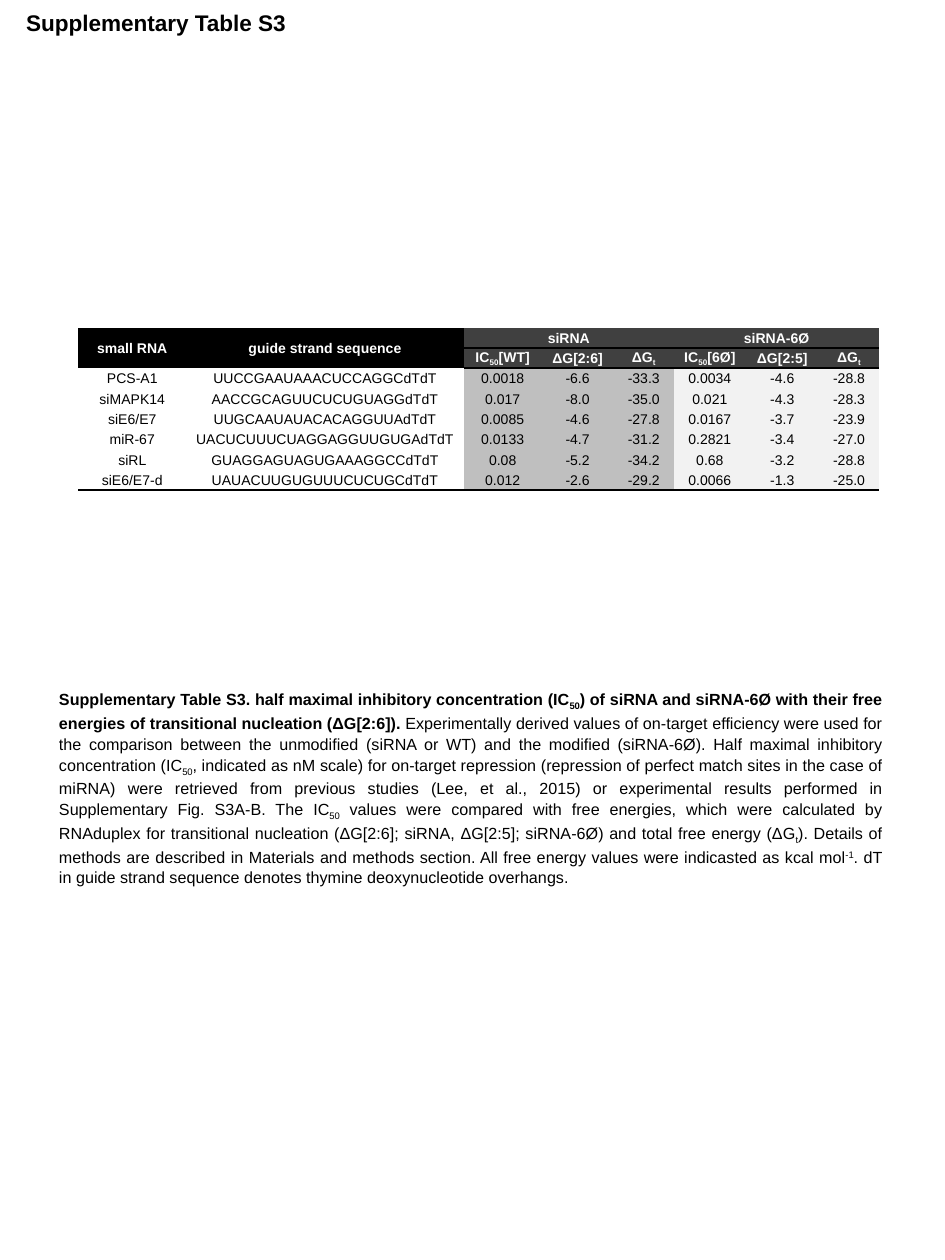
from lxml.etree import SubElement
from pptx import Presentation
from pptx.dml.color import RGBColor
from pptx.enum.text import MSO_ANCHOR, PP_ALIGN
from pptx.oxml.ns import qn
from pptx.util import Inches, Pt

NO_STYLE_NO_GRID = "{2D5ABB26-0587-4C30-8999-92F81FD0307C}"
SUBSCRIPT, SUPERSCRIPT = -25000, 30000


def add_span(para, text, size, bold=False, color="000000", baseline=0):
    span = para.add_run()
    span.text = text
    span.font.name = "Arial"
    span.font.size = Pt(size)
    span.font.bold = bold
    span.font.color.rgb = RGBColor.from_string(color)
    if baseline:
        span.font._element.set("baseline", str(baseline))


def add_border(cell, side):
    """Draw a black 1 pt line on one side: lnT or lnB."""
    line = SubElement(cell._tc.get_or_add_tcPr(), qn(f"a:{side}"), w=str(Pt(1)))
    fill = SubElement(line, qn("a:solidFill"))
    SubElement(fill, qn("a:srgbClr"), val="000000")


deck = Presentation()
deck.slide_width, deck.slide_height = Inches(7.5), Inches(10)
page = deck.slides.add_slide(deck.slide_layouts[6])

# Table: "|" switches subscript on and off
rows = [
    ["small RNA", "guide strand sequence", "siRNA", "", "", "siRNA-6Ø", "", ""],
    ["", "", "IC|50|[WT]", "ΔG[2:6]", "ΔG|t", "IC|50|[6Ø]", "ΔG[2:5]", "ΔG|t"],
    ["PCS-A1", "UUCCGAAUAAACUCCAGGCdTdT", "0.0018", "-6.6", "-33.3", "0.0034", "-4.6", "-28.8"],
    ["siMAPK14", "AACCGCAGUUCUCUGUAGGdTdT", "0.017", "-8.0", "-35.0", "0.021", "-4.3", "-28.3"],
    ["siE6/E7", "UUGCAAUAUACACAGGUUAdTdT", "0.0085", "-4.6", "-27.8", "0.0167", "-3.7", "-23.9"],
    ["miR-67", "UACUCUUUCUAGGAGGUUGUGAdTdT", "0.0133", "-4.7", "-31.2", "0.2821", "-3.4", "-27.0"],
    ["siRL", "GUAGGAGUAGUGAAAGGCCdTdT", "0.08", "-5.2", "-34.2", "0.68", "-3.2", "-28.8"],
    ["siE6/E7-d", "UAUACUUGUGUUUCUCUGCdTdT", "0.012", "-2.6", "-29.2", "0.0066", "-1.3", "-25.0"],
]
widths = [0.86, 2.2, 0.62, 0.57, 0.48, 0.57, 0.58, 0.48]
header_fills = ["000000"] * 2 + ["404040"] * 6
body_fills = [None] * 2 + ["BFBFBF"] * 3 + ["F2F2F2"] * 3

frame = page.shapes.add_table(len(rows), len(widths), Inches(0.62), Inches(2.6),
                              Inches(sum(widths)), Inches(1.29))
table = frame.table
table.first_row = table.horz_banding = False
table._tbl.tblPr.find(qn("a:tableStyleId")).text = NO_STYLE_NO_GRID
for column, width in zip(table.columns, widths):
    column.width = Inches(width)
for row in table.rows:
    row.height = Inches(1.29 / len(rows))

for row_index, values in enumerate(rows):
    is_header = row_index < 2
    fills = header_fills if is_header else body_fills
    for column_index, value in enumerate(values):
        cell = table.cell(row_index, column_index)
        cell.margin_left = cell.margin_top = cell.margin_right = Inches(0.01)
        cell.margin_bottom = 0
        cell.vertical_anchor = MSO_ANCHOR.MIDDLE
        para = cell.text_frame.paragraphs[0]
        para.alignment = PP_ALIGN.CENTER
        para.font.size = Pt(8)
        for part_index, part in enumerate(value.split("|") if value else []):
            add_span(para, part, 8, bold=is_header,
                     color="FFFFFF" if is_header else "000000",
                     baseline=SUBSCRIPT if part_index % 2 else 0)
        # Borders come before the fill in the cell properties
        if row_index == 1 and column_index >= 2:
            add_border(cell, "lnT")
        if row_index in (1, 7) or (row_index == 0 and column_index >= 2):
            add_border(cell, "lnB")
        if fills[column_index]:
            cell.fill.solid()
            cell.fill.fore_color.rgb = RGBColor.from_string(fills[column_index])

for column_index in (0, 1):
    table.cell(0, column_index).merge(table.cell(1, column_index))
for column_index in (2, 5):
    table.cell(0, column_index).merge(table.cell(0, column_index + 2))

# Caption
caption = page.shapes.add_textbox(Inches(0.37), Inches(5.41), Inches(6.73), Inches(2.79))
caption.text_frame.word_wrap = True
para = caption.text_frame.paragraphs[0]
para.alignment = PP_ALIGN.JUSTIFY
para.line_spacing = 1.08
caption_parts = [
    ("Supplementary Table S3. half maximal inhibitory concentration (IC", True, 0),
    ("50", True, SUBSCRIPT),
    (") of siRNA and siRNA-6Ø with their free energies of transitional nucleation "
     "(ΔG[2:6]). ", True, 0),
    ("Experimentally derived values of on-target efficiency were used for the comparison "
     "between the unmodified (siRNA or WT) and the modified (siRNA-6Ø). Half maximal "
     "inhibitory concentration (IC", False, 0),
    ("50", False, SUBSCRIPT),
    (", indicated as nM scale) for on-target repression (repression of perfect match sites "
     "in the case of miRNA) were retrieved from previous studies (Lee, et al., 2015) or "
     "experimental results performed in Supplementary Fig. S3A-B. The IC", False, 0),
    ("50", False, SUBSCRIPT),
    (" values were compared with free energies, which were calculated by RNAduplex for "
     "transitional nucleation (ΔG[2:6]; siRNA, ΔG[2:5]; siRNA-6Ø) and total free energy "
     "(ΔG", False, 0),
    ("t", False, SUBSCRIPT),
    ("). Details of methods are described in Materials and methods section. All free energy "
     "values were indicasted as kcal mol", False, 0),
    ("-1", False, SUPERSCRIPT),
    (". dT in guide strand sequence denotes thymine deoxynucleotide overhangs.", False, 0),
]
for text, bold, baseline in caption_parts:
    add_span(para, text, 9.2, bold=bold, baseline=baseline)

# Title
title = page.shapes.add_textbox(Inches(0.11), Inches(0.02), Inches(2.29), Inches(0.32))
title.text_frame.word_wrap = False
add_span(title.text_frame.paragraphs[0], "Supplementary Table S3", 12.9, bold=True)

deck.save("out.pptx")
